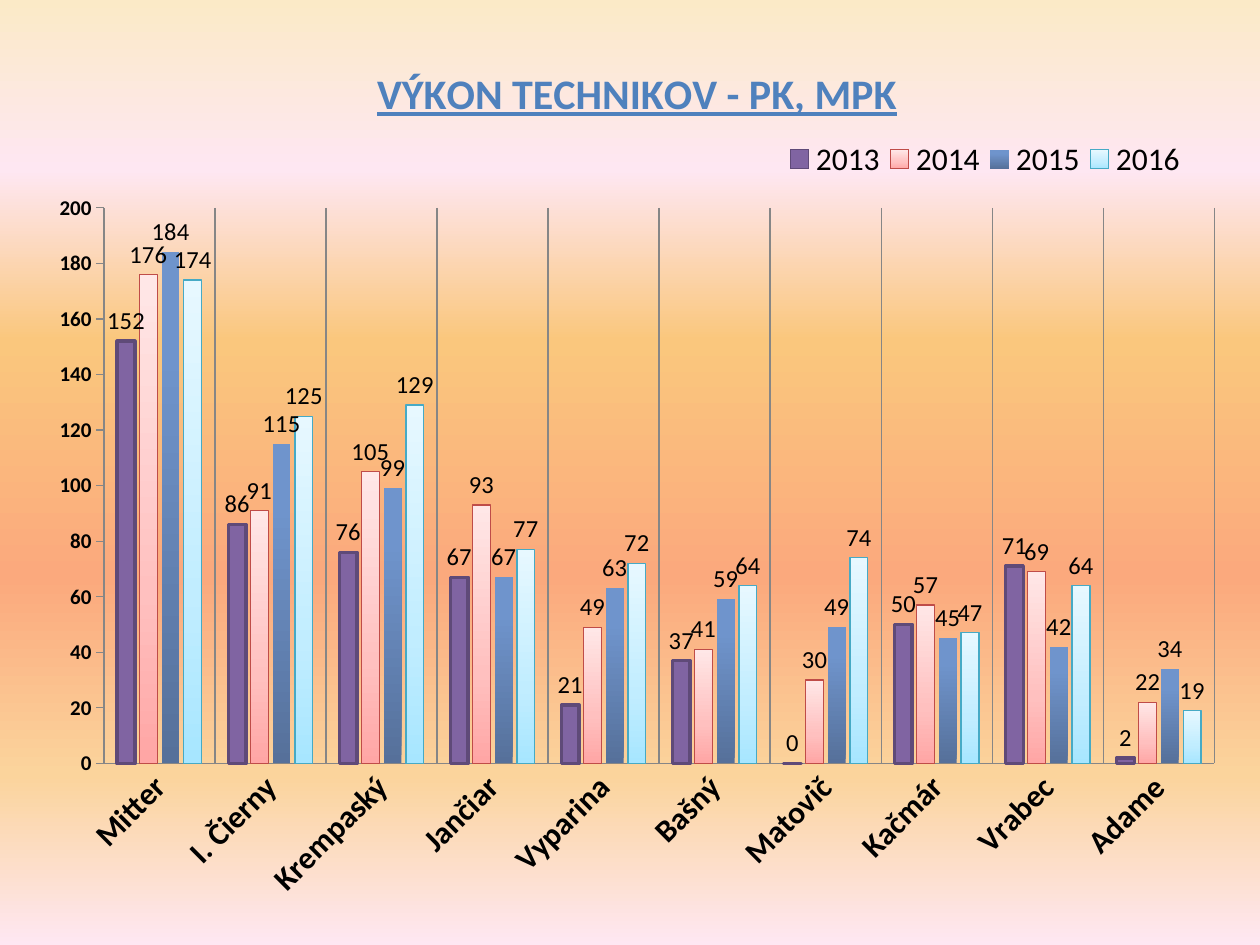
from lxml import etree
from pptx import Presentation
from pptx.chart.data import CategoryChartData
from pptx.dml.color import RGBColor
from pptx.enum.chart import XL_CHART_TYPE, XL_LABEL_POSITION, XL_LEGEND_POSITION, XL_TICK_MARK
from pptx.oxml.ns import qn
from pptx.util import Inches, Pt

BLACK = RGBColor(0x00, 0x00, 0x00)
BLUE = RGBColor(0x4F, 0x81, 0xBD)
GREY = RGBColor(0x86, 0x86, 0x86)
PURPLE = RGBColor(0x80, 0x64, 0xA2)
DARK_PURPLE = RGBColor(0x5F, 0x4A, 0x78)
RED = RGBColor(0xBF, 0x4C, 0x48)
TEAL = RGBColor(0x46, 0xAA, 0xC5)

BACKGROUND = [
    (0, RGBColor(0xFB, 0xEA, 0xC7)),
    (18, RGBColor(0xFE, 0xE7, 0xF2)),
    (36, RGBColor(0xFA, 0xC7, 0x7D)),
    (61, RGBColor(0xFB, 0xA9, 0x7D)),
    (82, RGBColor(0xFB, 0xD4, 0x9C)),
    (100, RGBColor(0xFE, 0xE7, 0xF2)),
]
PINKS = [
    (0, RGBColor(0xFF, 0xA6, 0xA5)),
    (35, RGBColor(0xFF, 0xC0, 0xBF)),
    (100, RGBColor(0xFF, 0xE7, 0xE7)),
]
BLUES = [
    (0, RGBColor(0x56, 0x70, 0x9A)),
    (80, RGBColor(0x6F, 0x94, 0xCC)),
    (100, RGBColor(0x6F, 0x94, 0xCC)),
]
CYANS = [
    (0, RGBColor(0xA7, 0xE6, 0xFF)),
    (35, RGBColor(0xC1, 0xED, 0xFF)),
    (100, RGBColor(0xE7, 0xF8, 0xFF)),
]

NAMES = ["Mitter", "I. Čierny", "Krempaský", "Jančiar", "Vyparina",
         "Bašný", "Matovič", "Kačmár", "Vrabec", "Adame"]
YEARS = [
    ("2013", [152, 86, 76, 67, 21, 37, 0, 50, 71, 2], None, DARK_PURPLE, 2),
    ("2014", [176, 91, 105, 93, 49, 41, 30, 57, 69, 22], PINKS, RED, 0.75),
    ("2015", [184, 115, 99, 67, 63, 59, 49, 45, 42, 34], BLUES, None, 0),
    ("2016", [174, 125, 129, 77, 72, 64, 74, 47, 64, 19], CYANS, TEAL, 0.75),
]


def paint_gradient(fill, owner, stops, angle):
    fill.gradient()
    gradient = owner.find(".//" + qn("a:gradFill"))
    stop_list = gradient.find(qn("a:gsLst"))
    for old in list(stop_list):
        stop_list.remove(old)
    for position, color in stops:
        stop = etree.SubElement(stop_list, qn("a:gs"), pos=str(position * 1000))
        etree.SubElement(stop, qn("a:srgbClr"), val=str(color))
    gradient.find(qn("a:lin")).set("ang", str(angle * 60000))


def place(element, index, settings):
    for old in element.findall(qn("c:layout")):
        element.remove(old)
    layout = etree.Element(qn("c:layout"))
    manual = etree.SubElement(layout, qn("c:manualLayout"))
    for name, value in settings.items():
        etree.SubElement(manual, qn("c:" + name), val=str(value))
    element.insert(index, layout)


deck = Presentation()
deck.slide_width = Inches(10)
deck.slide_height = Inches(7.5)
page = deck.slides.add_slide(deck.slide_layouts[6])
paint_gradient(page.background.fill, page.element, BACKGROUND, 90)

data = CategoryChartData()
data.categories = NAMES
for year, values, *_ in YEARS:
    data.add_series(year, values)
chart = page.shapes.add_chart(
    XL_CHART_TYPE.COLUMN_CLUSTERED,
    Inches(0.25), Inches(0.25), Inches(9.58), Inches(7), data,
).chart
chart.font.name = "Calibri"
chart.font.size = Pt(18)
chart.font.color.rgb = BLACK

chart.has_title = True
para = chart.chart_title.text_frame.paragraphs[0]
span = para.add_run()
span.text = "VÝKON TECHNIKOV - PK, MPK"
span.font.name = "Calibri"
span.font.size = Pt(24)
span.font.bold = True
span.font.underline = True
span.font.color.rgb = BLUE
chart.chart_title.include_in_layout = False
place(chart.chart_title.element if hasattr(chart.chart_title, "element") else chart.chart_title._element, 1,
      {"xMode": "edge", "yMode": "edge", "x": 0.28, "y": 0.03})

chart.has_legend = True
chart.legend.position = XL_LEGEND_POSITION.TOP
chart.legend.include_in_layout = False
chart.legend.font.size = Pt(18)
place(chart.legend._element, 1,
      {"xMode": "edge", "yMode": "edge", "x": 0.62, "y": 0.11, "w": 0.34, "h": 0.07})

plot = chart.plots[0]
plot.gap_width = 150
plot.overlap = -25
plot.vary_by_categories = False
place(chart.element.find(".//" + qn("c:plotArea")), 0,
      {"layoutTarget": "inner", "xMode": "edge", "yMode": "edge",
       "x": 0.06, "y": 0.2, "w": 0.92, "h": 0.63})

for series, (year, values, stops, outline, width) in zip(plot.series, YEARS):
    if stops:
        paint_gradient(series.format.fill, series._element, stops, 270)
    else:
        series.format.fill.solid()
        series.format.fill.fore_color.rgb = PURPLE
    if outline:
        series.format.line.color.rgb = outline
        series.format.line.width = Pt(width)
    else:
        series.format.line.fill.background()
    series.invert_if_negative = False
    labels = series.data_labels
    labels.show_value = True
    labels.position = XL_LABEL_POSITION.OUTSIDE_END
    labels.font.size = Pt(14)

names_axis = chart.category_axis
values_axis = chart.value_axis
for axis, size in ((names_axis, 18), (values_axis, 12)):
    axis.tick_labels.font.size = Pt(size)
    axis.tick_labels.font.bold = True
    axis.format.line.color.rgb = GREY
    axis.minor_tick_mark = XL_TICK_MARK.NONE
names_axis.major_tick_mark = XL_TICK_MARK.NONE
names_axis.has_major_gridlines = True
names_axis.major_gridlines.format.line.color.rgb = GREY
names_axis._element.find(qn("c:txPr")).find(qn("a:bodyPr")).set("rot", "-2700000")
values_axis.major_tick_mark = XL_TICK_MARK.OUTSIDE
values_axis.has_major_gridlines = False
values_axis.minimum_scale = 0
values_axis.maximum_scale = 200
values_axis.major_unit = 20

deck.save("out.pptx")
